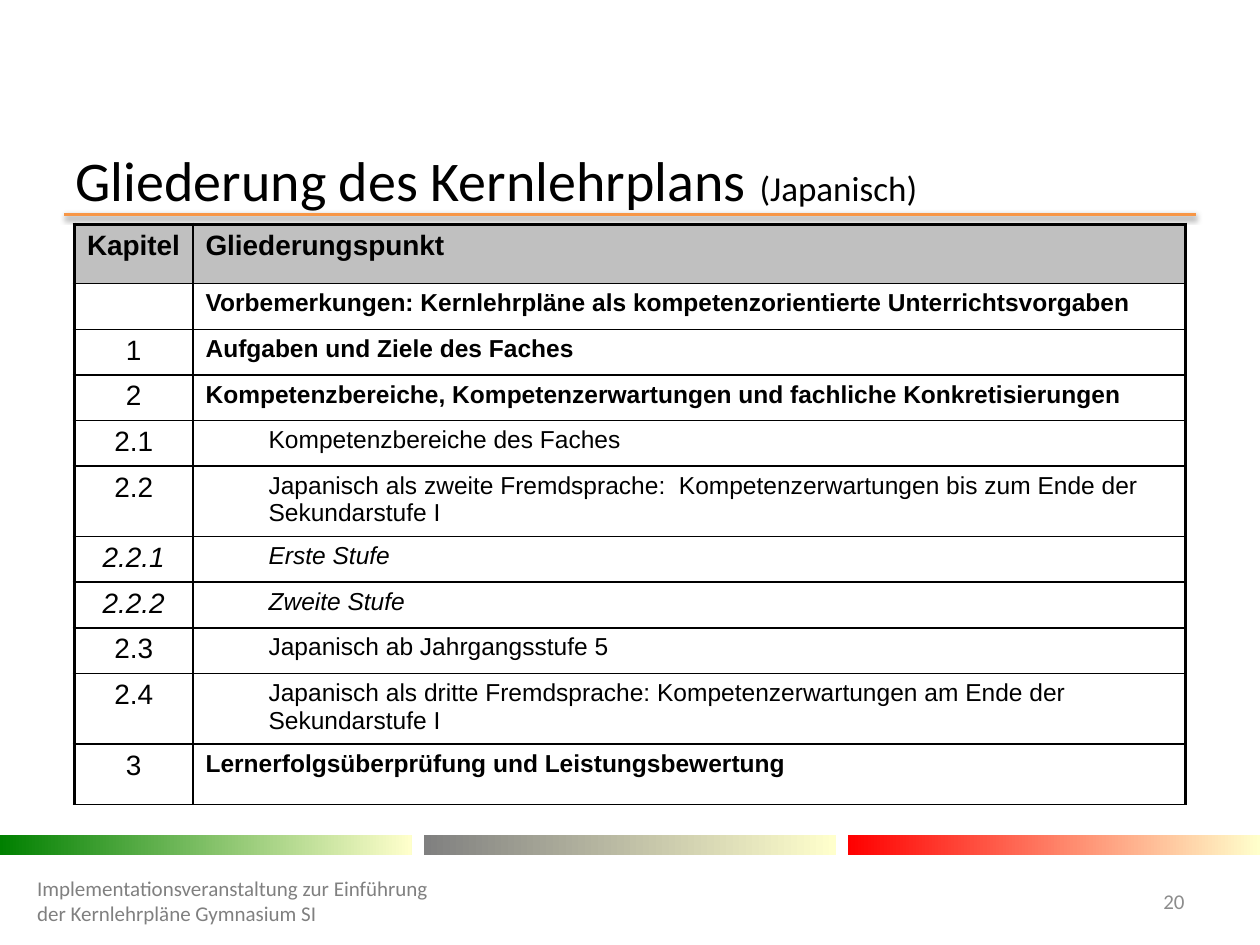
from dataclasses import dataclass

from lxml import etree
from pptx import Presentation
from pptx import util as u
from pptx.dml import color
from pptx.enum import shapes, text
from pptx.oxml import ns


@dataclass(frozen=True)
class Theme:
    ink: str = "000000"
    accent: str = "F79646"
    header: str = "C0C0C0"
    footer: str = "808080"
    number: str = "8C8C8C"
    fade: str = "FFFFCC"
    bars: tuple = ("008000", "808080", "FF0000")
    heading: str = "Calibri"
    body: str = "Arial"
    title_size: float = 32
    subtitle_size: float = 20
    chapter_size: float = 16
    item_size: float = 14
    footer_size: float = 12
    frame: float = 2.25
    grid: float = 1


THEME = Theme()
LEFT, CENTER, RIGHT = text.PP_ALIGN.LEFT, text.PP_ALIGN.CENTER, text.PP_ALIGN.RIGHT

HEADER = ("Kapitel", "Gliederungspunkt")
OUTLINE = [
    ("", "Vorbemerkungen: Kernlehrpläne als kompetenzorientierte Unterrichtsvorgaben"),
    ("1", "Aufgaben und Ziele des Faches"),
    ("2", "Kompetenzbereiche, Kompetenzerwartungen und fachliche Konkretisierungen"),
    ("2.1", "Kompetenzbereiche des Faches"),
    ("2.2", "Japanisch als zweite Fremdsprache:  Kompetenzerwartungen bis zum Ende der Sekundarstufe I"),
    ("2.2.1", "Erste Stufe"),
    ("2.2.2", "Zweite Stufe"),
    ("2.3", "Japanisch ab Jahrgangsstufe 5"),
    ("2.4", "Japanisch als dritte Fremdsprache: Kompetenzerwartungen am Ende der Sekundarstufe I"),
    ("3", "Lernerfolgsüberprüfung und Leistungsbewertung"),
]
HEADER_HEIGHT, ROW_HEIGHT, TALL_HEIGHT, LAST_HEIGHT = 1.2, 0.88, 1.37, 1.22
TALL_CHAPTERS = ("2.2", "2.4")


def rgb(value):
    return color.RGBColor.from_string(value)


def child(parent, tag, **attributes):
    return etree.SubElement(parent, ns.qn(tag), attributes)


def write(paragraph, words, size, font=THEME.body, ink=THEME.ink,
          bold=False, italic=False, align=LEFT, indent=0):
    paragraph.alignment = align
    if indent:
        properties = paragraph._p.get_or_add_pPr()
        properties.set("marL", str(u.Cm(indent)))
        properties.set("indent", "0")
    if not words:
        child(paragraph._p, "a:endParaRPr", sz=str(int(size * 100)))
        return
    run = paragraph.add_run()
    run.text = words
    run.font.size = u.Pt(size)
    run.font.name = font
    run.font.bold = bold
    run.font.italic = italic
    run.font.color.rgb = rgb(ink)


def add_title(slide):
    title = slide.shapes.title
    title.left, title.top, title.width, title.height = map(u.Cm, (1.27, 3.12, 22.86, 1))
    frame = title.text_frame
    frame.auto_size = text.MSO_AUTO_SIZE.NONE
    frame.vertical_anchor = text.MSO_ANCHOR.MIDDLE
    heading = frame.paragraphs[0]
    write(heading, "Gliederung des Kernlehrplans ", THEME.title_size, THEME.heading)
    write(heading, "(Japanisch)", THEME.subtitle_size, THEME.heading)


def add_title_rule(slide):
    rule = slide.shapes.add_connector(
        shapes.MSO_CONNECTOR.STRAIGHT, u.Cm(1.3), u.Cm(4.32), u.Cm(24.1), u.Cm(4.32))
    rule.line.color.rgb = rgb(THEME.accent)
    rule.line.width = u.Pt(2)
    effects = child(rule._element.spPr, "a:effectLst")
    shadow = child(effects, "a:outerShdw", blurRad=str(u.Pt(3.1)), dist=str(u.Pt(1.6)),
                   dir="5400000", rotWithShape="0")
    shade = child(shadow, "a:srgbClr", val=THEME.ink)
    child(shade, "a:alpha", val="38000")


def add_bar(slide, left, start):
    bar = slide.shapes.add_shape(
        shapes.MSO_SHAPE.RECTANGLE, u.Cm(left), u.Cm(16.84), u.Cm(8.3), u.Cm(0.4))
    bar.shadow.inherit = False
    bar.line.fill.background()
    bar.fill.gradient()
    bar.fill.gradient_angle = 0
    for stop, position, shade in zip(bar.fill.gradient_stops, (0, 1), (start, THEME.fade)):
        stop.position = position
        stop.color.rgb = rgb(shade)


def add_footer_text(slide, left, width, words, **look):
    box = slide.shapes.add_textbox(u.Cm(left), u.Cm(17.65), u.Cm(width), u.Cm(1.02))
    frame = box.text_frame
    frame.word_wrap = True
    frame.vertical_anchor = text.MSO_ANCHOR.MIDDLE
    write(frame.paragraphs[0], words, THEME.footer_size, THEME.heading, **look)


def set_borders(cell, **widths):
    properties = cell._tc.get_or_add_tcPr()
    for side in "LRTB":
        border = child(properties, f"a:ln{side}", w=str(u.Pt(widths.get(side, THEME.grid))))
        child(child(border, "a:solidFill"), "a:srgbClr", val=THEME.ink)


def fill_cell(cell, words, top, shade=None, **look):
    side = "R" if look.pop("last_column") else "L"
    cell.margin_top = cell.margin_bottom = u.Cm(0.12)
    set_borders(cell, **{side: THEME.frame, "T": top})
    if shade:
        cell.fill.solid()
        cell.fill.fore_color.rgb = rgb(shade)
    else:
        cell.fill.background()
    write(cell.text_frame.paragraphs[0], words, **look)


def row_height(chapter):
    if chapter == OUTLINE[-1][0]:
        return LAST_HEIGHT
    return TALL_HEIGHT if chapter in TALL_CHAPTERS else ROW_HEIGHT


def add_outline(slide):
    heights = [HEADER_HEIGHT] + [row_height(chapter) for chapter, _ in OUTLINE]
    outline = slide.shapes.add_table(
        len(heights), 2, u.Cm(1.5), u.Cm(4.52), u.Cm(22.4), u.Cm(sum(heights))).table
    outline.first_row = outline.horz_banding = False
    for column, width in zip(outline.columns, (2.39, 20.01)):
        column.width = u.Cm(width)
    for row, height in zip(outline.rows, heights):
        row.height = u.Cm(height)

    for index, label in enumerate(HEADER):
        fill_cell(outline.cell(0, index), label, THEME.frame, THEME.header,
                  last_column=index == 1, size=THEME.chapter_size, bold=True)
    for index, (chapter, topic) in enumerate(OUTLINE, start=1):
        depth = chapter.count(".")
        italic = depth == 2
        fill_cell(outline.cell(index, 0), chapter, THEME.grid, last_column=False,
                  size=THEME.chapter_size, italic=italic, align=CENTER)
        fill_cell(outline.cell(index, 1), topic, THEME.grid, last_column=True,
                  size=THEME.item_size, bold=depth == 0, italic=italic,
                  indent=1.27 if depth else 0)


def main():
    deck = Presentation()
    deck.slide_width, deck.slide_height = u.Cm(25.4), u.Cm(19.05)
    slide = deck.slides.add_slide(deck.slide_layouts[5])
    add_title_rule(slide)
    for index, start in enumerate(THEME.bars):
        add_bar(slide, index * 8.55, start)
    add_title(slide)
    add_footer_text(slide, 0.5, 8.4,
                    "Implementationsveranstaltung zur Einführung der Kernlehrpläne Gymnasium SI",
                    ink=THEME.footer)
    add_footer_text(slide, 22.5, 1.63, "20", ink=THEME.number, align=RIGHT)
    add_outline(slide)
    deck.save("out.pptx")


if __name__ == "__main__":
    main()
